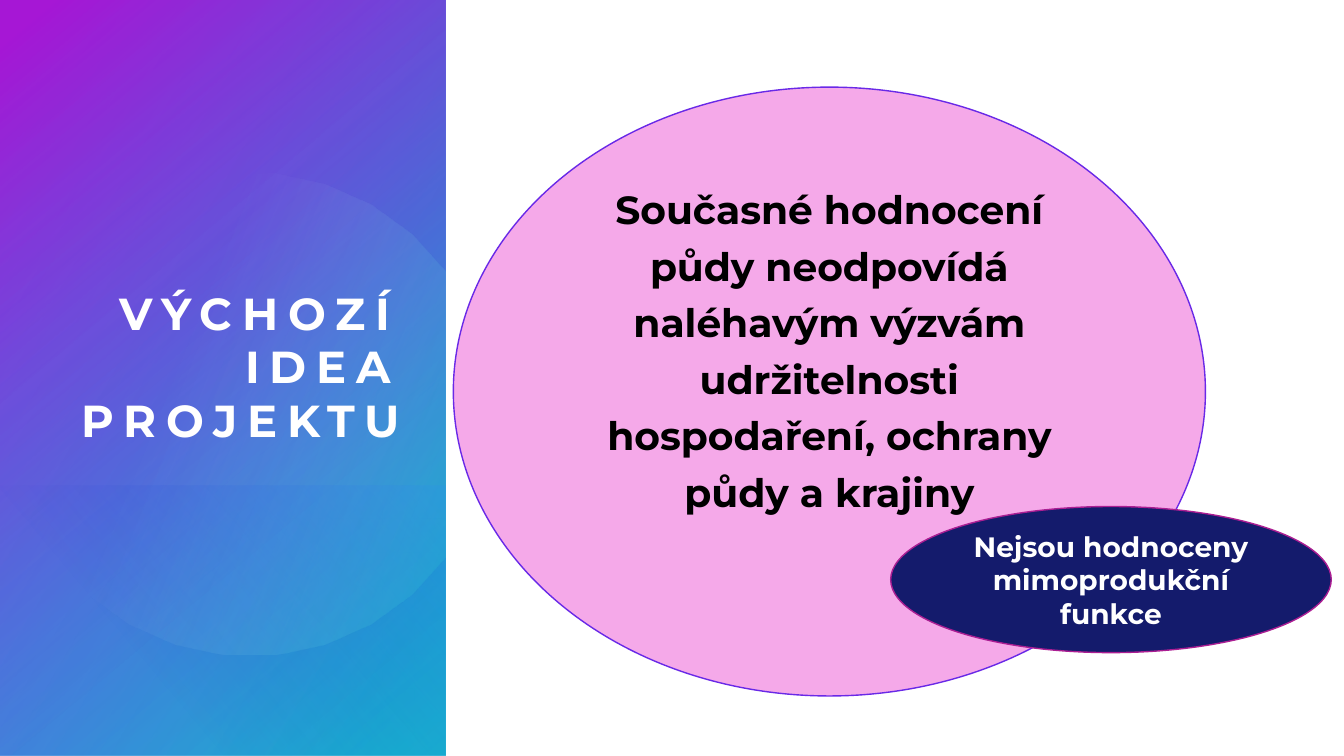
from math import cos, sin, radians
from lxml.etree import SubElement
from pptx import Presentation
from pptx.dml.color import RGBColor
from pptx.enum.shapes import MSO_SHAPE
from pptx.enum.text import MSO_ANCHOR, MSO_AUTO_SIZE, PP_ALIGN
from pptx.oxml.ns import qn
from pptx.util import Inches, Pt

WIDE, HIGH = Inches(13.33), Inches(7.5)
SIDE = 33.18
FONT = "Montserrat"
HUES = {
    "white": "FFFFFF", "black": "000000", "pink": "F5A9E9", "navy": "141B6C",
    "violet": "6929E7", "plum": "AB1E93", "teal": "16BDCD", "sky": "2987E7",
    "blue": "2837D8", "purple": "A617D5", "mist": "D4D7F7",
}


def tint(name):
    """Return the named colour."""
    return RGBColor.from_string(HUES[name])


def area(left, top, width, height):
    """Turn percentages of the slide into lengths."""
    return [round(side * part / 100) for side, part in
            zip((WIDE, HIGH, WIDE, HIGH), (left, top, width, height))]


def fade(shape, angle, stops):
    """Fill a shape with a gradient of (place, colour, opacity) stops."""
    shape.shadow.inherit = False
    shape.line.fill.background()
    shape.fill.gradient()
    grad = shape.element.spPr.find(qn("a:gradFill"))
    grad.set("rotWithShape", "1")
    for child in list(grad):
        grad.remove(child)
    group = SubElement(grad, qn("a:gsLst"))
    for place, name, alpha in stops:
        stop = SubElement(group, qn("a:gs"), pos=str(place * 1000))
        color = SubElement(stop, qn("a:srgbClr"), val=HUES[name])
        SubElement(color, qn("a:alpha"), val=str(alpha * 1000))
    SubElement(grad, qn("a:lin"), ang=str(angle * 60000), scaled="0")


def plain(slide, kind, place, fill):
    """Add a preset shape with one colour and no outline."""
    shape = slide.shapes.add_shape(kind, *area(*place))
    shape.shadow.inherit = False
    shape.fill.solid()
    shape.fill.fore_color.rgb = tint(fill)
    shape.line.fill.background()
    return shape


def panel(slide, top, angle, stops):
    """Add a quarter-turned, mirrored side panel reaching the slide's foot."""
    left, top, width, height = area(0, top, SIDE, 100 - top)
    shift = (width - height) // 2
    shape = slide.shapes.add_shape(
        MSO_SHAPE.RECTANGLE, left + shift, top - shift, height, width)
    shape.rotation = 90
    shape.element.spPr.find(qn("a:xfrm")).set("flipH", "1")
    fade(shape, angle, stops)


def disc(slide):
    """Add the faint disc cut off at the panel's edge."""
    mid_x, mid_y, _, size = area(18.6, 54.8, 0, 32)
    dots = [(round(mid_x + size * cos(radians(turn))),
             round(mid_y + size * sin(radians(turn))))
            for turn in range(36, 325, 12)]
    form = slide.shapes.build_freeform(*dots[0])
    form.add_line_segments(dots[1:], close=True)
    fade(form.convert_to_shape(), 22, [(39, "mist", 0), (100, "teal", 29)])


def write(shape, text, size, color, align, anchor):
    """Set one bold paragraph in a shape."""
    frame = shape.text_frame
    frame.word_wrap = True
    frame.auto_size = MSO_AUTO_SIZE.NONE
    frame.vertical_anchor = anchor
    frame.text = text
    para = frame.paragraphs[0]
    para.alignment = align
    font = para.font
    font.name, font.size, font.bold = FONT, Pt(size), True
    font.color.rgb = tint(color)
    return para


def trim(shape):
    """Drop the inner margins of a shape's text."""
    frame = shape.text_frame
    frame.margin_left = frame.margin_right = 0
    frame.margin_top = frame.margin_bottom = 0


def head(slide, text):
    """Place the title on top of the side panel."""
    title = slide.shapes.title
    title.left, title.top, title.width, title.height = area(3.17, 15.07, 26.63, 44)
    trim(title)
    para = write(title, text, 32, "white", PP_ALIGN.RIGHT, MSO_ANCHOR.BOTTOM)
    para.line_spacing = 1.0
    para.space_before = Pt(0)
    for font in title.element.iter(qn("a:defRPr")):
        font.set("spc", "700")
    slide.shapes.element.append(title.element)


def oval(slide, place, fill, line, text, size, color, anchor):
    """Add an outlined ellipse with centred text."""
    shape = plain(slide, MSO_SHAPE.OVAL, place, fill)
    shape.line.color.rgb = tint(line)
    shape.line.width = Pt(1)
    para = write(shape, text, size, color, PP_ALIGN.CENTER, anchor)
    para.space_after = Pt(6)
    return shape


def main():
    """Build and save the slide."""
    deck = Presentation()
    deck.slide_width, deck.slide_height = WIDE, HIGH
    slide = deck.slides.add_slide(deck.slide_layouts[5])
    plain(slide, MSO_SHAPE.RECTANGLE, (0, 0, 100, 100), "white")
    panel(slide, 0, 60, [(8, "teal", 100), (100, "sky", 72)])
    panel(slide, 0, 40, [(0, "blue", 0), (96, "purple", 100)])
    panel(slide, 64.27, 130, [(2, "sky", 35), (67, "blue", 0)])
    disc(slide)
    head(slide, "VÝCHOZÍ IDEA PROJEKTU")
    large = oval(
        slide, (33.73, 11.53, 55.96, 80.53), "pink", "violet",
        "Současné hodnocení půdy neodpovídá naléhavým výzvám udržitelnosti "
        "hospodaření, ochrany půdy a krajiny", 28, "black", MSO_ANCHOR.TOP)
    trim(large)
    large.text_frame.paragraphs[0].line_spacing = 1.2
    oval(slide, (66.27, 67, 32.78, 19.33), "navy", "plum",
         "Nejsou hodnoceny mimoprodukční funkce", 20, "white", MSO_ANCHOR.MIDDLE)
    deck.save("out.pptx")


if __name__ == "__main__":
    main()
